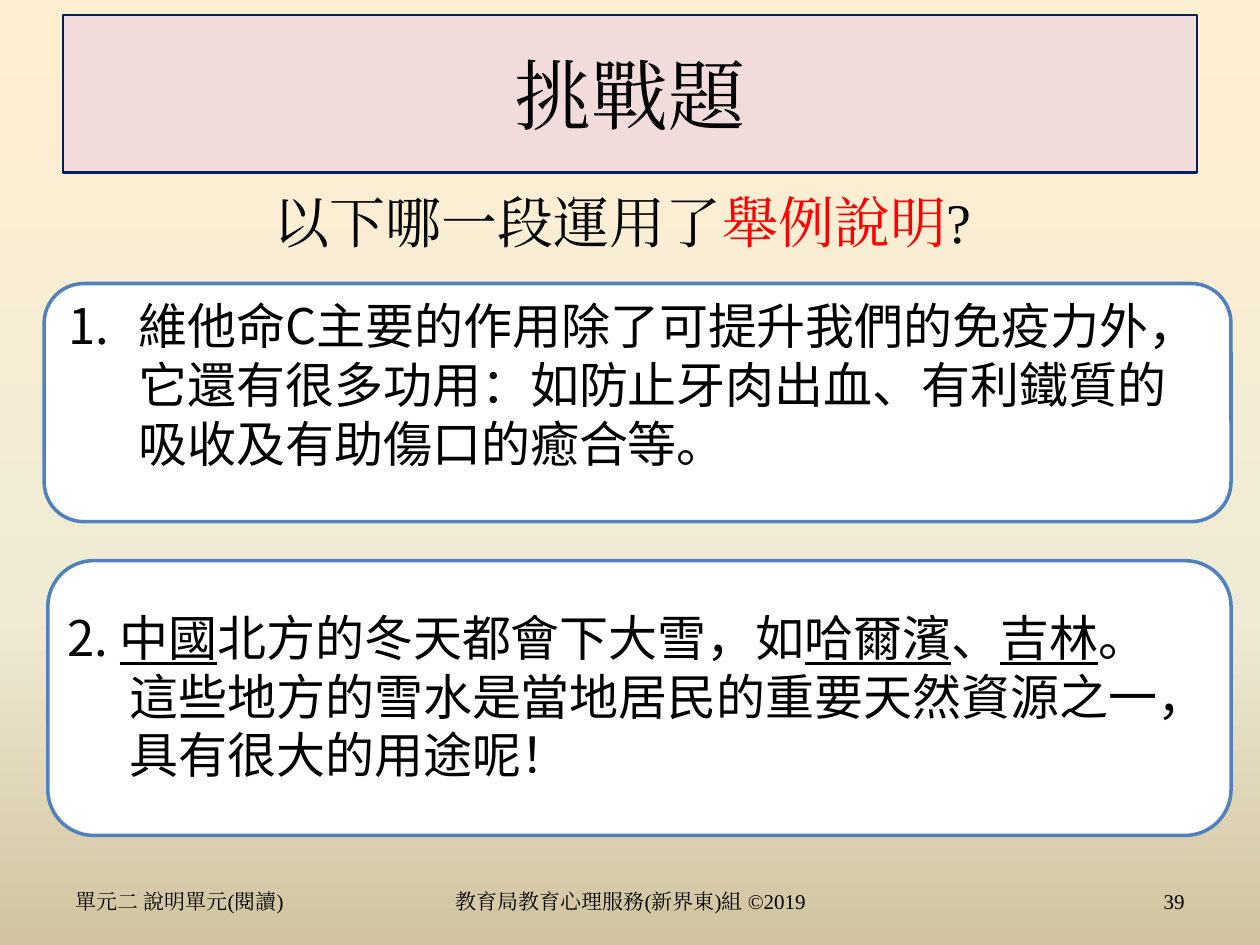
import copy

import pptx
import pptx.dml.color
import pptx.enum.shapes
import pptx.enum.text
import pptx.oxml.ns
import pptx.util
from lxml import etree

RGB = pptx.dml.color.RGBColor
BLACK = RGB(0, 0, 0)
WHITE = RGB(255, 255, 255)
RED = RGB(255, 0, 0)
PINK = RGB(0xF2, 0xDC, 0xDB)
NAVY = RGB(0, 0x20, 0x60)
BLUE = RGB(0x4F, 0x81, 0xBD)
SKY = [(0, RGB(0xFF, 0xEF, 0xD1)), (0.65, RGB(0xF0, 0xEB, 0xD5)), (1, RGB(0xD1, 0xC3, 0x9F))]

SHAPE = pptx.enum.shapes.MSO_SHAPE
ALIGN = pptx.enum.text.PP_ALIGN
ANCHOR = pptx.enum.text.MSO_ANCHOR
SERIF = "Times New Roman"
SANS = "Noto Sans CJK SC"


class Deck:
    """Style and current slide, laid out on a grid of 100 columns by 75 rows."""

    def __init__(self):
        self.file = pptx.Presentation()
        self.file.slide_width = pptx.util.Inches(10)
        self.file.slide_height = pptx.util.Inches(7.5)
        self.cell = self.file.slide_width / 100
        self.page = self.file.slides.add_slide(self.file.slide_layouts[6])

    def span(self, *cells):
        return [round(n * self.cell) for n in cells]

    def sky(self, stops):
        fill = self.page.background.fill
        fill.gradient()
        fill.gradient_angle = 270
        first = self.page.element.xpath(".//a:gs")[0]
        first.addnext(copy.deepcopy(first))
        for stop, (place, color) in zip(fill.gradient_stops, stops):
            stop.position = place
            stop.color.rgb = color

    def box(self, kind, area, fill, line, width):
        shape = self.page.shapes.add_shape(kind, *self.span(*area))
        shape.shadow.inherit = False
        shape.fill.solid()
        shape.fill.fore_color.rgb = fill
        shape.line.color.rgb = line
        shape.line.width = pptx.util.Pt(width)
        return shape

    def label(self, area, runs, size, **style):
        shape = self.page.shapes.add_textbox(*self.span(*area))
        self.words(shape, runs, size, **style)
        return shape

    def words(self, shape, runs, size, font=SERIF, align=ALIGN.LEFT, anchor=ANCHOR.MIDDLE, hang=0, count=False):
        frame = shape.text_frame
        frame.word_wrap = True
        frame.vertical_anchor = anchor
        para = frame.paragraphs[0]
        para.alignment = align
        props = para._p.get_or_add_pPr()
        if hang:
            indent = self.span(hang)[0]
            props.set("marL", str(indent))
            props.set("indent", str(-indent))
        if count:
            tag = pptx.oxml.ns.qn("a:buAutoNum")
            etree.SubElement(props, tag, type="arabicPeriod")
        for text, color, under in runs:
            run = para.add_run()
            run.text = text
            run.font.size = pptx.util.Pt(size)
            run.font.name = font
            run.font.color.rgb = color
            run.font.underline = under
            east = etree.SubElement(run._r.get_or_add_rPr(), pptx.oxml.ns.qn("a:ea"))
            east.set("typeface", font)


def plain(text):
    return text, BLACK, False


def name(text):
    return text, BLACK, True


def main():
    deck = Deck()
    deck.sky(SKY)

    title = deck.box(SHAPE.RECTANGLE, (5, 1.2, 90, 12.5), PINK, NAVY, 1.5)
    deck.words(title, [plain("挑戰題")], 44, align=ALIGN.CENTER)
    ask = [plain("以下哪一段運用了"), ("舉例說明", RED, False), plain("?")]
    deck.label((4.4, 14.4, 90, 7), ask, 32, align=ALIGN.CENTER, anchor=ANCHOR.TOP)

    first = deck.box(SHAPE.ROUNDED_RECTANGLE, (3.5, 22.5, 94.2, 18.9), WHITE, BLUE, 2)
    first.text_frame.margin_bottom = deck.span(3.5)[0]
    health = "維他命C主要的作用除了可提升我們的免疫力外，它還有很多功用：如防止牙肉出血、有利鐵質的吸收及有助傷口的癒合等。"
    deck.words(first, [plain(health)], 28, font=SANS, hang=5.6, count=True)

    second = deck.box(SHAPE.ROUNDED_RECTANGLE, (3.8, 44.5, 93.9, 21.8), WHITE, BLUE, 2)
    snow = [
        plain("2. "),
        name("中國"),
        plain("北方的冬天都會下大雪，如"),
        name("哈爾濱"),
        plain("、"),
        name("吉林"),
        plain("。這些地方的雪水是當地居民的重要天然資源之一，具有很大的用途呢！"),
    ]
    story = deck.label((4.4, 47.7, 90.6, 15.2), snow, 28, font=SANS, anchor=ANCHOR.TOP, hang=4.9)
    deck.page.shapes.add_group_shape([second, story])

    foot = [
        (5, 23.3, "單元二 說明單元(閱讀)", ALIGN.LEFT),
        (34.2, 31.7, "教育局教育心理服務(新界東)組 ©2019", ALIGN.CENTER),
        (71.7, 23.3, "39", ALIGN.RIGHT),
    ]
    for left, width, text, align in foot:
        deck.label((left, 69.5, width, 4), [plain(text)], 12, align=align)

    deck.file.save("out.pptx")


if __name__ == "__main__":
    main()
